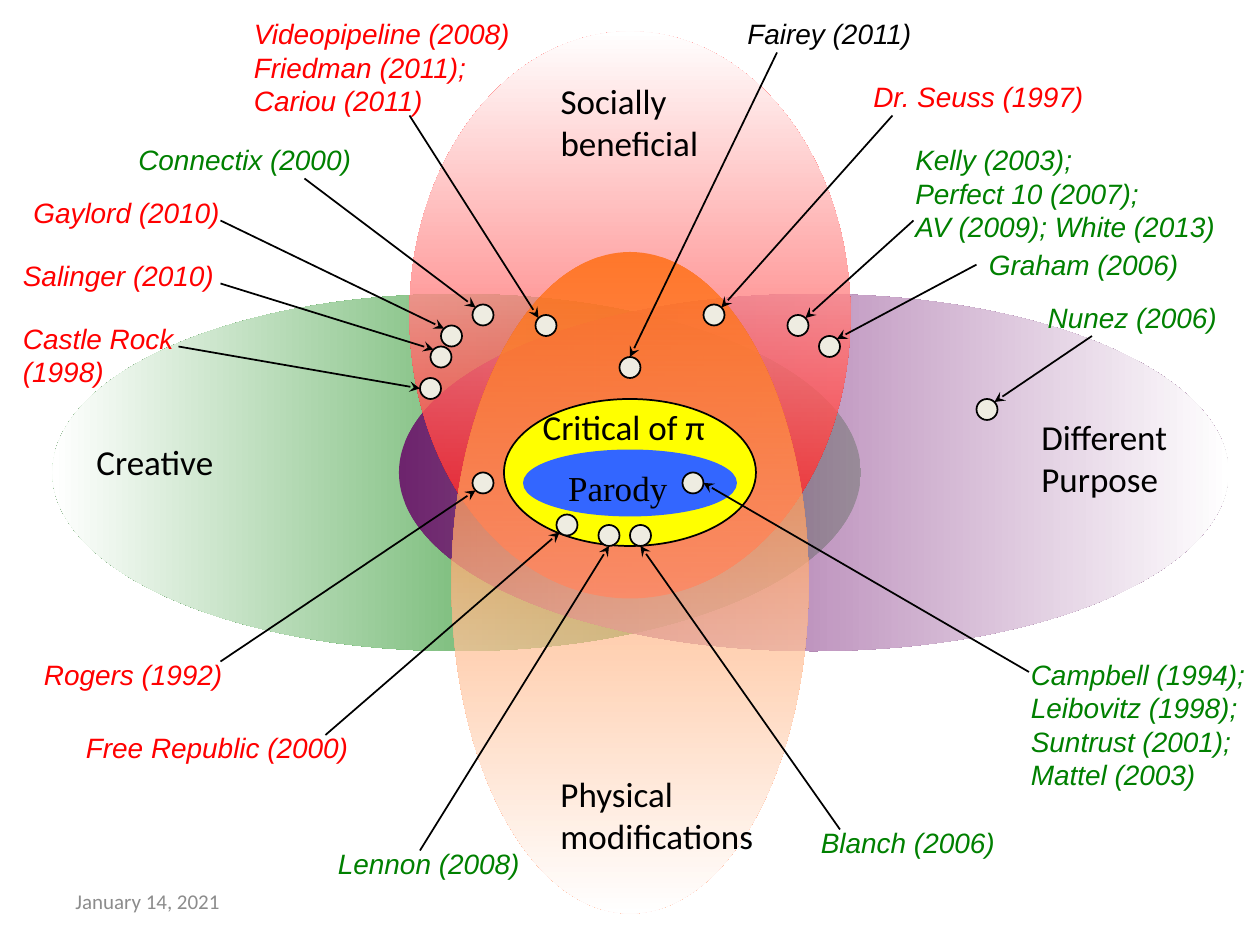
import lxml.etree
import pptx
import pptx.util
import pptx.dml.color
import pptx.enum.shapes
import pptx.enum.text
import pptx.oxml
import pptx.oxml.ns

Cm, Pt = pptx.util.Cm, pptx.util.Pt
RGB = pptx.dml.color.RGBColor.from_string
ANCHOR = pptx.enum.text.MSO_ANCHOR
qn = pptx.oxml.ns.qn

THEME = {
    "black": "000000", "red": "FF0000", "green": "008000", "grey": "8C8C8C",
    "purple": "660066", "orange": "FF6600", "yellow": "FFFF00",
    "blue": "3366FF", "dot": "EEECE1", "white": "FFFFFF",
    "heading": 20, "case": 16, "date": 12,
    "sans": "Calibri", "label": "Arial", "serif": "Times New Roman",
}
UNIT = Cm(2.54 / 12)  # the layout grid: all positions below count in these units

prs = pptx.Presentation()
prs.slide_width, prs.slide_height = Cm(25.4), Cm(19.05)
s = prs.slides.add_slide(prs.slide_layouts[6])


def write_text(sp, text, size="heading", font="sans", color="black",
               italic=False, wrap=False, anchor=ANCHOR.TOP):
    tf = sp.text_frame
    tf.word_wrap = wrap
    tf.vertical_anchor = anchor
    for i, line in enumerate(text.split("\n")):
        p = tf.add_paragraph() if i else tf.paragraphs[0]
        p.alignment = pptx.enum.text.PP_ALIGN.LEFT
        r = p.add_run()
        r.text = line
        r.font.size, r.font.name = Pt(THEME[size]), THEME[font]
        r.font.italic = italic
        r.font.color.rgb = RGB(THEME[color])


def add_ellipse(box, fill=None, line=None, width=1):
    sp = s.shapes.add_shape(pptx.enum.shapes.MSO_SHAPE.OVAL,
                            *(round(v * UNIT) for v in box))
    sp.shadow.inherit = False
    if fill:
        sp.fill.solid()
        sp.fill.fore_color.rgb = RGB(THEME[fill])
    if line:
        sp.line.color.rgb = RGB(THEME[line])
        sp.line.width = Pt(width)
    else:
        sp.line.fill.background()
    return sp


# Date
sp = s.shapes.add_textbox(*(round(v * UNIT) for v in (6, 83.4, 28, 4.8)))
write_text(sp, "January 14, 2021", size="date", color="grey", wrap=True,
           anchor=ANCHOR.MIDDLE)

# Four overlapping factors, each fading to white: box, colour, opacity %, angle
for box, color, alpha, angle in [
    ((5, 28, 77, 34), "green", 100, 180),
    ((38, 28, 79, 34), "purple", 81, 0),
    ((39, 3, 42, 54), "red", 81, 270),
    ((43, 24, 34, 63), "orange", 75, 90),
]:
    sp = add_ellipse(box)
    stops = "".join(
        f'<a:gs pos="{pos}"><a:srgbClr val="{THEME[c]}">'
        f'<a:alpha val="{alpha * 1000}"/></a:srgbClr></a:gs>'
        for pos, c in ((0, color), (100000, "white")))
    grad = pptx.oxml.parse_xml(
        f'<a:gradFill {pptx.oxml.ns.nsdecls("a")} rotWithShape="1">'
        f'<a:gsLst>{stops}</a:gsLst>'
        f'<a:lin ang="{angle * 60000}" scaled="1"/></a:gradFill>')
    sp._element.spPr.find(qn("a:prstGeom")).addnext(grad)

# Core
add_ellipse((48, 38, 24, 14), "yellow", "black")
sp = add_ellipse((50, 43, 20, 6), "blue", "blue", 2.25)
write_text(sp, "Parody", font="serif", wrap=True)

# Factor names: text, left, top, width
for text, x, y, w in [
    ("Socially\nbeneficial", 52.2, 7, 15.7),
    ("Creative", 8, 41.4, 13.9),
    ("Different\nPurpose", 98, 39, 14.6),
    ("Physical\nmodifications", 52.2, 73, 20.9),
    ("Critical of π", 50.5, 38, 19),
]:
    h = 5.3 + 4 * text.count("\n")
    sp = s.shapes.add_textbox(*(round(v * UNIT) for v in (x, y, w, h)))
    write_text(sp, text)

# Cases: text, colour, label (left, top, width), arrow start,
# dot corner, side of the dot where the arrow lands
cases = [
    ("Kelly (2003);\nPerfect 10 (2007);\nAV (2009); White (2013)", "green",
     (86, 13, 31.9), (87, 21), (75, 30), (1, -1)),
    ("Connectix (2000)", "green", (12, 13, 23.5), (29, 17), (45, 29), (-1, -1)),
    ("Videopipeline (2008)\nFriedman (2011);\nCariou (2011)", "red",
     (23, 1, 27.7), (39, 11), (51, 30), (-1, -1)),
    ("Campbell (1994);\nLeibovitz (1998);\nSuntrust (2001);\nMattel (2003)",
     "green", (97, 62, 23.8), (98, 64), (65, 45), (1, 0)),
    ("Blanch (2006)", "green", (77, 78, 19.8), (80, 79), (60, 50), (0, 1)),
    ("Graham (2006)", "green", (93, 23, 21.4), (93, 25.2), (78, 32), (1, -1)),
    ("Gaylord (2010)", "red", (2, 18, 21), (21, 21), (42, 31), (-1, -1)),
    ("Nunez (2006)", "green", (98.6, 28, 19.4), (104, 32), (93, 38), (1, -1)),
    ("Rogers (1992)", "red", (3, 62, 20.3), (21, 63), (45, 45), (-1, 1)),
    ("Fairey (2011)", "black", (70, 1, 18.8), (74, 5), (59, 34), (0, -1)),
    ("Salinger (2010)", "red", (1, 24, 21.5), (21, 27), (41, 33), (-1, -1)),
    ("Lennon (2008)", "green", (31, 80, 20.6), (40, 81), (57, 50), (0, 1)),
    ("Free Republic (2000)", "red", (7, 69, 28.3), (31, 70), (53, 49), (-1, 1)),
    ("Dr. Seuss (1997)", "red", (82, 7, 23.3), (85, 11), (67, 29), (1, -1)),
    ("Castle Rock\n(1998)", "red", (1, 30, 17.6), (17, 33), (40, 36), (-1, 0)),
]
for text, color, (x, y, w), start, dot, side in cases:
    h = 4.4 + 3.2 * text.count("\n")
    sp = s.shapes.add_textbox(*(round(v * UNIT) for v in (x, y, w, h)))
    write_text(sp, text, size="case", font="label", color=color, italic=True)

    add_ellipse((*dot, 2, 2), "dot", "black")
    reach = 0.71 if all(side) else 1
    end = [d + 1 + reach * k for d, k in zip(dot, side)]
    line = s.shapes.add_connector(pptx.enum.shapes.MSO_CONNECTOR.STRAIGHT,
                                  *(round(v * UNIT) for v in (*start, *end)))
    line.line.color.rgb = RGB(THEME["black"])
    line.line.width = Pt(1)
    spPr = line._element.spPr
    lxml.etree.SubElement(spPr.find(qn("a:ln")), qn("a:tailEnd"), type="stealth")
    lxml.etree.SubElement(spPr, qn("a:effectLst"))

prs.save("out.pptx")
